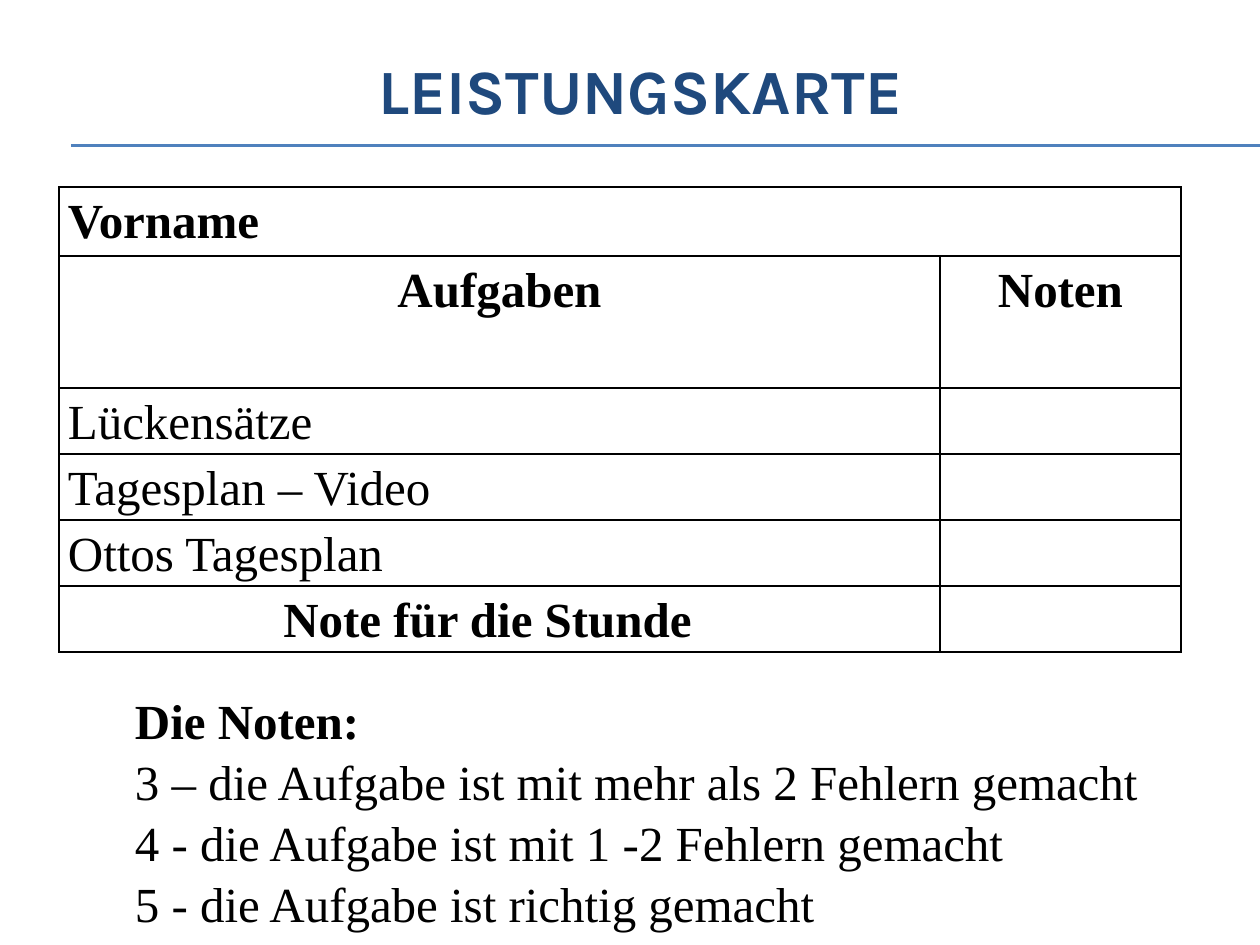
from lxml.etree import SubElement
from pptx import Presentation
from pptx.dml.color import RGBColor
from pptx.enum.shapes import MSO_CONNECTOR
from pptx.enum.text import MSO_ANCHOR, PP_ALIGN
from pptx.oxml.ns import qn
from pptx.util import Pt

PX = 914400 / 126
NAVY = RGBColor(0x1F, 0x49, 0x7D)
BLUE = RGBColor(0x4F, 0x81, 0xBD)
BLACK = RGBColor(0, 0, 0)


def px(value):
    return round(value * PX)


def write(para, text, size=28, font="Times New Roman", color=BLACK, bold=False,
          align=PP_ALIGN.LEFT, spacing=1.0):
    para.alignment = align
    para.line_spacing = spacing
    span = para.add_run()
    span.text = text
    span.font.size = Pt(size)
    span.font.name = font
    span.font.bold = bold
    span.font.color.rgb = color


deck = Presentation()
deck.slide_width, deck.slide_height = px(1260), px(945)
page = deck.slides.add_slide(deck.slide_layouts[5])

# Double rule under the title
for y in (145, 146):
    rule = page.shapes.add_connector(MSO_CONNECTOR.STRAIGHT, px(71), px(y), px(1260), px(y))
    rule.line.color.rgb = BLUE
    rule.line.width = Pt(0.75)
    SubElement(rule._element.spPr, qn("a:effectLst"))

title = page.shapes.title
title.left, title.top, title.width, title.height = px(42), px(0), px(1197), px(179)
title.text_frame.vertical_anchor = MSO_ANCHOR.MIDDLE
write(title.text_frame.paragraphs[0], "LEISTUNGSKARTE", size=36, font="Karla",
      color=NAVY, bold=True, align=PP_ALIGN.CENTER)

# Score card: task, grade, bold, alignment, row height
LEFT, CENTER = PP_ALIGN.LEFT, PP_ALIGN.CENTER
rows = [
    ("Vorname", "", True, LEFT, 69),
    ("Aufgaben", "Noten", True, CENTER, 132),
    ("Lückensätze", "", False, LEFT, 66),
    ("Tagesplan – Video", "", False, LEFT, 66),
    ("Ottos Tagesplan", "", False, LEFT, 66),
    ("Note für die Stunde", "", True, CENTER, 66),
]
column_widths = (881, 241)
table = page.shapes.add_table(len(rows), 2, px(59), px(187), px(sum(column_widths)),
                              px(sum(row[-1] for row in rows))).table
table.first_row = table.horz_banding = False
for column, width in zip(table.columns, column_widths):
    column.width = px(width)

for index, (task, grade, bold, align, height) in enumerate(rows):
    table.rows[index].height = px(height)
    for cell, text in zip(table.rows[index].cells, (task, grade)):
        cell.margin_left = cell.margin_right = px(9)
        cell.margin_top = cell.margin_bottom = 0
        if text:
            write(cell.text_frame.paragraphs[0], text, bold=bold, align=align, spacing=1.15)
        properties = cell._tc.get_or_add_tcPr()
        for side in ("a:lnL", "a:lnR", "a:lnT", "a:lnB"):
            border = SubElement(properties, qn(side), w=str(Pt(1)))
            fill = SubElement(border, qn("a:solidFill"))
            SubElement(fill, qn("a:srgbClr"), val=str(BLACK))
        cell.fill.background()
table.cell(0, 0).merge(table.cell(0, 1))
table.cell(len(rows) - 1, 0).margin_right = px(33)

# Grading key
key_lines = [
    "Die Noten:",
    "3 – die Aufgabe ist mit mehr als 2 Fehlern gemacht",
    "4 - die Aufgabe ist mit 1 -2 Fehlern gemacht",
    "5 - die Aufgabe ist richtig gemacht",
]
key = page.shapes.add_textbox(px(135), px(688), px(1125), px(236)).text_frame
key.word_wrap = True
key.margin_left = key.margin_right = key.margin_top = key.margin_bottom = 0
for index, text in enumerate(key_lines):
    para = key.add_paragraph() if index else key.paragraphs[0]
    write(para, text, bold=index == 0, spacing=1.04)

deck.save("out.pptx")
